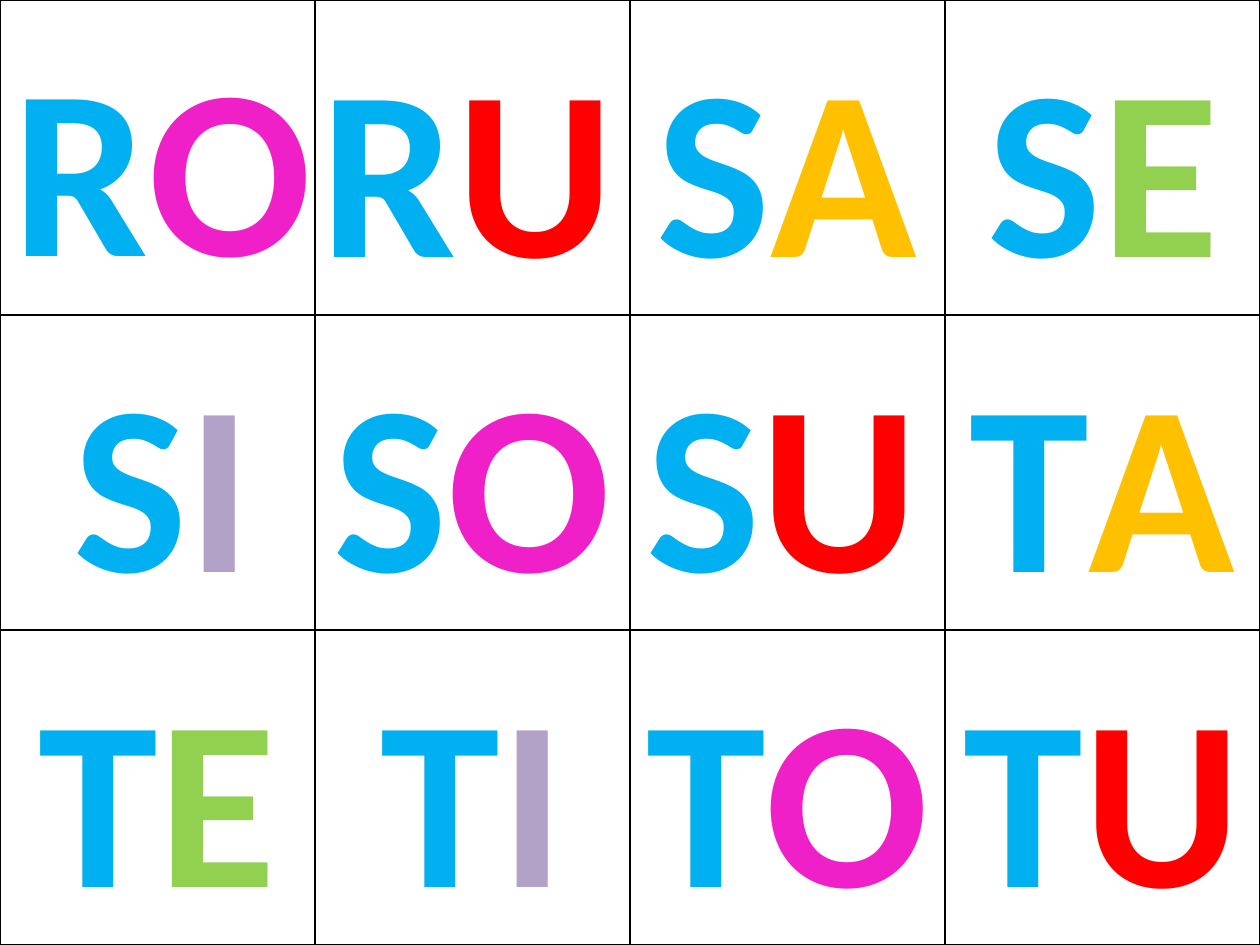
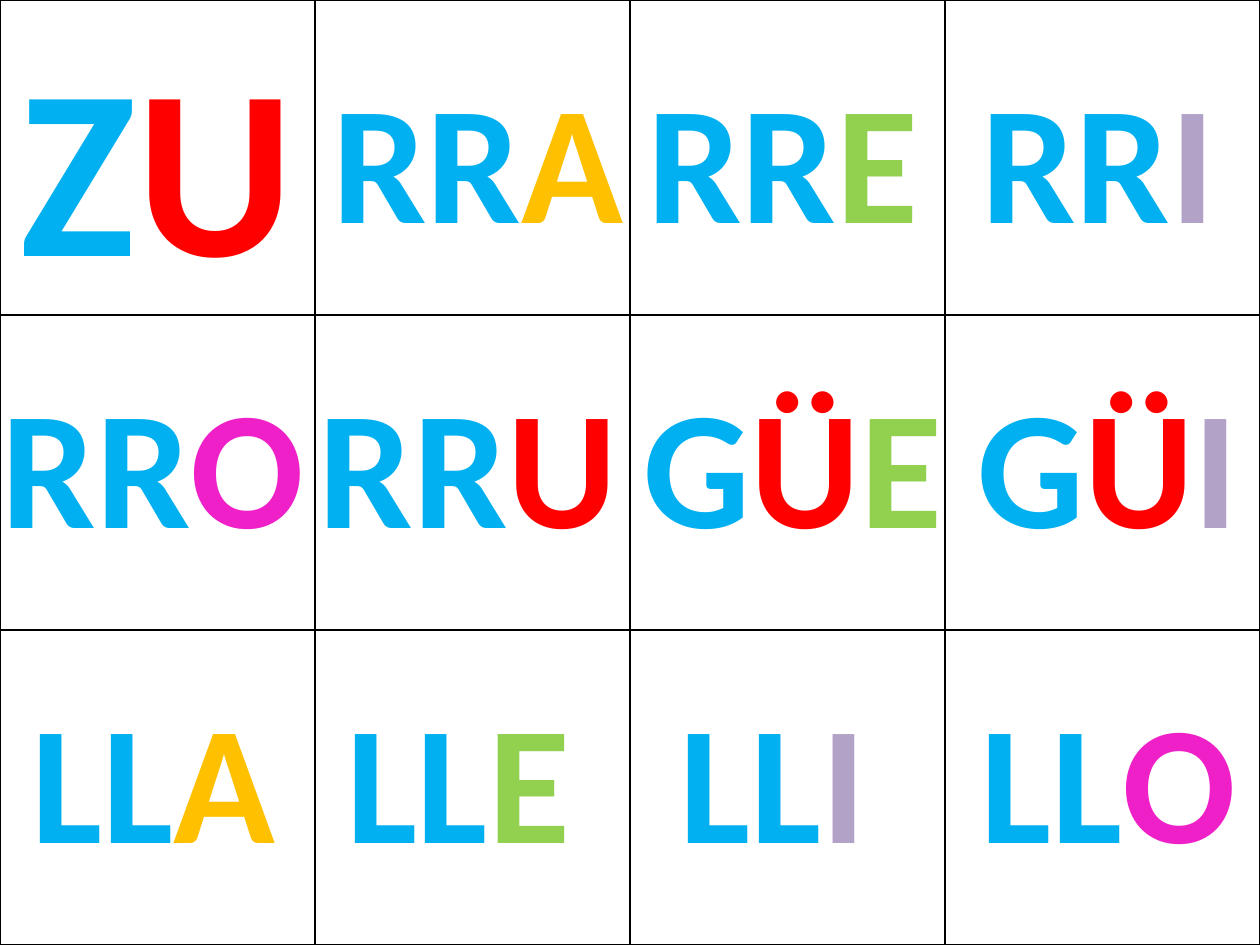
from itertools import groupby, product

from lxml import etree
from pptx import Presentation
from pptx import util as u
from pptx.dml.color import RGBColor
from pptx.enum import text
from pptx.oxml import ns

# Lengths are px, 126 to the inch
EMU_PER_PX = 914400 / 126
SLIDE_WIDTH, SLIDE_HEIGHT = 1260, 945
COLUMNS, ROWS = 4, 3

FONT = "Calibri"
CONSONANT = "00B0F0"
VOWELS = {"A": "FFC000", "E": "92D050", "I": "B3A2C7",
          "O": "F020C8", "U": "FF0000", "Ü": "FF0000"}
OUTLINE, GRID_LINE, PAPER = "054697", "000000", "FFFFFF"

# Card styles: font size and box height
LARGE, SMALL = (138, 305), (96, 217)

# One card per cell, row by row: syllable, left, top, width, style
PAGES = [
    [("RO", -10, 9, 344, LARGE), ("RU", 295, 10, 344, LARGE),
     ("SA", 610, 10, 354, LARGE), ("SE", 916, 10, 374, LARGE),
     ("SI", 0, 325, 325, LARGE), ("SO", 315, 325, 315, LARGE),
     ("SU", 610, 325, 344, LARGE), ("TA", 925, 325, 354, LARGE),
     ("TE", -10, 640, 335, LARGE), ("TI", 305, 640, 335, LARGE),
     ("TO", 630, 640, 315, LARGE), ("TU", 945, 640, 315, LARGE)],
    [("ZU", 0, 9, 315, LARGE), ("RRA", 286, 49, 384, SMALL),
     ("RRE", 591, 49, 384, SMALL), ("RRI", 906, 49, 384, SMALL),
     ("RRO", -39, 354, 384, SMALL), ("RRU", 276, 354, 384, SMALL),
     ("GÜE", 601, 354, 384, SMALL), ("GÜI", 916, 354, 384, SMALL),
     ("LLA", -39, 669, 384, SMALL), ("LLE", 266, 669, 384, SMALL),
     ("LLI", 581, 669, 384, SMALL), ("LLO", 916, 669, 384, SMALL)],
]


def px(length):
    return u.Emu(round(length * EMU_PER_PX))


def colour(value):
    return RGBColor.from_string(value)


def letter_colour(letter):
    return VOWELS.get(letter, CONSONANT)


def line_element(tag, value):
    """A solid line of one point, for cell borders and letter outlines."""
    line = etree.Element(ns.qn(tag), w=str(u.Pt(1)))
    fill = etree.SubElement(line, ns.qn("a:solidFill"))
    etree.SubElement(fill, ns.qn("a:srgbClr"), val=value)
    return line


def add_span(para, content, *, size, fill, bold=True, outline=OUTLINE):
    span = para.add_run()
    span.text = content
    span.font.name = FONT
    span.font.size = u.Pt(size)
    span.font.bold = bold
    span.font.color.rgb = colour(fill)
    span.font._element.insert(0, line_element("a:ln", outline))


class SyllableSheet:
    def __init__(self, deck):
        self.deck = deck
        self.page = None

    def new_page(self):
        self.page = self.deck.slides.add_slide(self.deck.slide_layouts[6])

    def grid(self):
        table = self.page.shapes.add_table(
            ROWS, COLUMNS, 0, 0, px(SLIDE_WIDTH), px(SLIDE_HEIGHT)).table
        table.first_row = table.horz_banding = False
        for row, column in product(range(ROWS), range(COLUMNS)):
            cell = table.cell(row, column)
            properties = cell._tc.get_or_add_tcPr()
            for side in ("L", "R", "T", "B"):
                properties.append(line_element(f"a:ln{side}", GRID_LINE))
            cell.fill.solid()
            cell.fill.fore_color.rgb = colour(PAPER)

    def card(self, syllable, left, top, width, style):
        size, height = style
        box = self.page.shapes.add_textbox(px(left), px(top), px(width), px(height))
        frame = box.text_frame
        frame.word_wrap = True
        frame.auto_size = text.MSO_AUTO_SIZE.SHAPE_TO_FIT_TEXT
        para = frame.paragraphs[0]
        para.alignment = text.PP_ALIGN.CENTER
        for fill, letters in groupby(syllable, key=letter_colour):
            add_span(para, "".join(letters), size=size, fill=fill)


def main():
    deck = Presentation()
    deck.slide_width, deck.slide_height = px(SLIDE_WIDTH), px(SLIDE_HEIGHT)
    sheet = SyllableSheet(deck)
    for cards in PAGES:
        sheet.new_page()
        sheet.grid()
        for card in cards:
            sheet.card(*card)
    deck.save("out.pptx")


if __name__ == "__main__":
    main()
